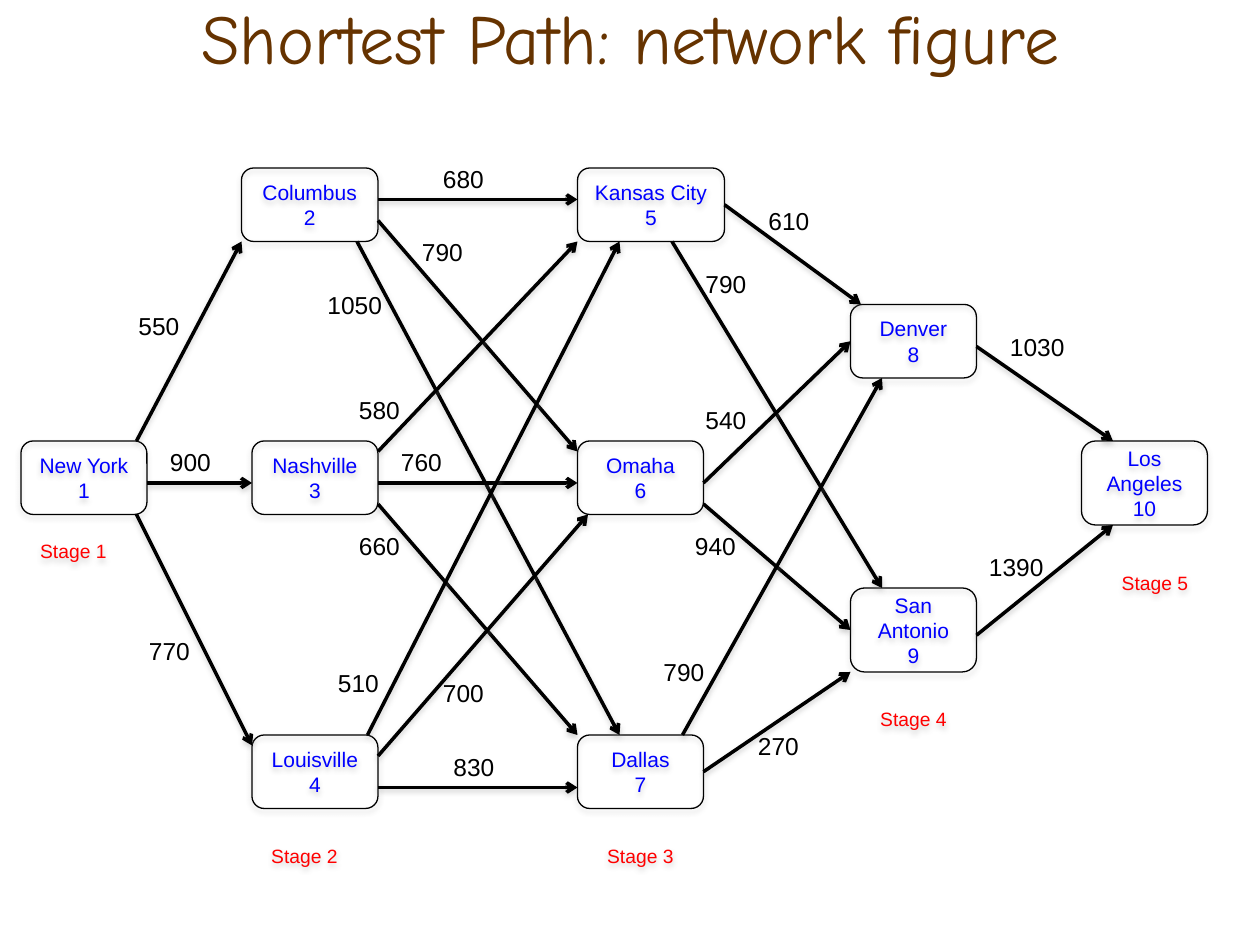
from lxml import etree
from pptx import Presentation
from pptx.dml.color import RGBColor
from pptx.enum import shapes as kinds, text as txt
from pptx.oxml import ns, parse_xml
from pptx.util import Pt

BLACK = RGBColor(0, 0, 0)
BLUE = RGBColor(0, 0, 255)
RED = RGBColor(255, 0, 0)
BROWN = RGBColor(0x66, 0x33, 0)

# city and number, left, top, width, height
NODES = [
    ("New York\n1", 12, 252, 72, 42),
    ("Columbus\n2", 138, 96, 78, 42),
    ("Kansas City\n5", 330, 96, 84, 42),
    ("Denver\n8", 486, 174, 72, 42),
    ("Los Angeles\n10", 618, 252, 72, 48),
    ("Omaha\n6", 330, 252, 72, 42),
    ("Dallas\n7", 330, 420, 72, 42),
    ("Nashville\n3", 144, 252, 72, 42),
    ("Louisville\n4", 144, 420, 72, 42),
    ("San Antonio\n9", 486, 336, 72, 48),
]

# distance, label corner, arrow start, arrow end
ROADS = [
    ("550", (72, 174), (78, 252), (138, 138)),
    ("900", (90, 252), (84, 276), (144, 276)),
    ("770", (78, 360), (78, 294), (144, 426)),
    ("680", (246, 90), (216, 114), (330, 114)),
    ("790", (234, 132), (216, 126), (330, 258)),
    ("1050", (180, 162), (204, 138), (354, 420)),
    ("580", (198, 222), (216, 258), (330, 138)),
    ("760", (222, 252), (216, 276), (330, 276)),
    ("660", (198, 300), (216, 288), (330, 420)),
    ("510", (186, 378), (210, 420), (354, 138)),
    ("700", (246, 384), (216, 432), (336, 294)),
    ("830", (252, 426), (216, 450), (330, 450)),
    ("610", (432, 114), (414, 117), (492, 174)),
    ("790", (396, 150), (384, 138), (504, 336)),
    ("540", (396, 228), (402, 276), (486, 195)),
    ("940", (390, 300), (402, 288), (486, 360)),
    ("790", (372, 372), (390, 420), (504, 216)),
    ("270", (426, 414), (402, 441), (486, 384)),
    ("1030", (570, 186), (558, 198), (636, 252)),
    ("1390", (558, 312), (558, 363), (636, 300)),
]

STAGES = [(12, 306), (144, 480), (336, 480), (492, 402), (630, 324)]


def shade(shape, dist):
    """Add a soft grey shadow below the shape; call after fill and line."""
    shape._element.spPr.append(parse_xml(
        f'<a:effectLst {ns.nsdecls("a")}>'
        f'<a:outerShdw blurRad="{Pt(3.1)}" dist="{Pt(dist)}" dir="5400000"'
        ' rotWithShape="0"><a:srgbClr val="808080"><a:alpha val="35000"/>'
        '</a:srgbClr></a:outerShdw></a:effectLst>'))


def write(shape, words, size, color, font="Arial", align=txt.PP_ALIGN.CENTER):
    frame = shape.text_frame
    frame.text = words
    frame.word_wrap = True
    frame.vertical_anchor = txt.MSO_ANCHOR.MIDDLE
    for para in frame.paragraphs:
        para.alignment = align
        for run in para.runs:
            run.font.size = Pt(size)
            run.font.name = font
            run.font.color.rgb = color


deck = Presentation()
deck.slide_width, deck.slide_height = Pt(720), Pt(540)
slide = deck.slides.add_slide(deck.slide_layouts[5])
items = slide.shapes

title = items.title
title.left, title.top, title.width, title.height = Pt(0), Pt(0), Pt(720), Pt(42)
write(title, "Shortest Path: network figure", 40, BROWN, "Comic Neue")
title.text_frame.auto_size = txt.MSO_AUTO_SIZE.NONE

for words, *place in NODES:
    node = items.add_shape(kinds.MSO_SHAPE.ROUNDED_RECTANGLE, *map(Pt, place))
    node.fill.background()
    node.line.color.rgb = BLACK
    node.line.width = Pt(0.75)
    shade(node, 1.8)
    write(node, words, 12, BLUE)

for _, _, start, end in ROADS:
    road = items.add_connector(kinds.MSO_CONNECTOR.STRAIGHT, *map(Pt, start + end))
    road.line.color.rgb = BLACK
    road.line.width = Pt(2)
    etree.SubElement(road.line._get_or_add_ln(), ns.qn("a:tailEnd"), type="arrow")
    shade(road, 1.6)

for num, (left, top) in enumerate(STAGES, 1):
    stage = items.add_textbox(Pt(left), Pt(top), Pt(60), Pt(18))
    shade(stage, 1.8)
    write(stage, f"Stage {num}", 11, RED)

for miles, (left, top), _, _ in ROADS:
    label = items.add_textbox(Pt(left), Pt(top), Pt(48), Pt(24))
    write(label, miles, 14, BLACK, align=txt.PP_ALIGN.LEFT)
    label.text_frame.vertical_anchor = txt.MSO_ANCHOR.TOP
    label.text_frame.auto_size = txt.MSO_AUTO_SIZE.SHAPE_TO_FIT_TEXT

deck.save("out.pptx")
